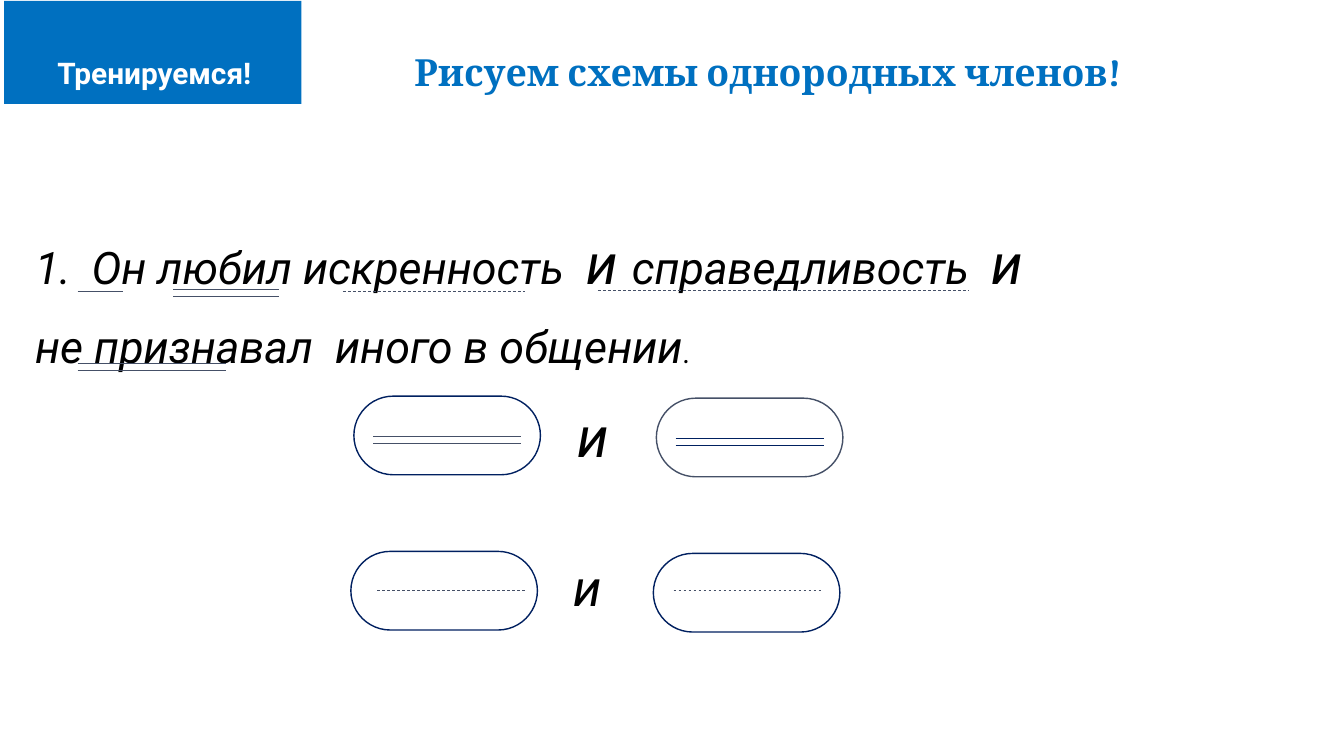
from lxml.etree import SubElement
from pptx import Presentation
from pptx.dml.color import RGBColor
from pptx.enum.dml import MSO_LINE as Dash
from pptx.enum.shapes import MSO_CONNECTOR as Conn, MSO_SHAPE as Kind
from pptx.enum.text import MSO_ANCHOR as Anchor, PP_ALIGN as Align
from pptx.oxml.ns import qn
from pptx.util import Inches, Pt

BLUE = RGBColor(0x00, 0x70, 0xC0)
NAVY = RGBColor(0x00, 0x20, 0x60)
SLATE = RGBColor(0x45, 0x50, 0x67)
BLACK = RGBColor(0, 0, 0)
WHITE = RGBColor(0xFF, 0xFF, 0xFF)


def add_run(para, text, size, color=BLACK, face="Roboto", bold=False, italic=True):
    run = para.add_run()
    run.text = text
    font = run.font
    font.size, font.name = Pt(size), face
    font.bold, font.italic = bold, italic
    font.color.rgb = color


def add_box(slide, left, top, width, height):
    box = slide.shapes.add_textbox(*map(Inches, (left, top, width, height)))
    box.text_frame.word_wrap = True
    return box.text_frame


def add_shape(slide, kind, left, top, width, height, fill):
    shape = slide.shapes.add_shape(kind, *map(Inches, (left, top, width, height)))
    shape.shadow.inherit = False
    shape.fill.solid()
    shape.fill.fore_color.rgb = fill
    return shape


def set_insets(frame, left, top, right, bottom):
    frame.margin_left, frame.margin_top = Inches(left), Inches(top)
    frame.margin_right, frame.margin_bottom = Inches(right), Inches(bottom)


def add_number(para):
    props = para._p.get_or_add_pPr()
    props.set("marL", str(Inches(0.56)))
    props.set("indent", str(-Inches(0.56)))
    SubElement(props, qn("a:buFont")).set("typeface", "+mj-lt")
    SubElement(props, qn("a:buAutoNum")).set("type", "arabicPeriod")


def add_line(slide, left, top, width, color=SLATE, dashed=False):
    line = slide.shapes.add_connector(
        Conn.STRAIGHT, Inches(left), Inches(top), Inches(left + width), Inches(top))
    line.line.color.rgb = color
    line.line.width = Pt(0.5)
    if dashed:
        line.line.dash_style = Dash.DASH
    SubElement(line._element.spPr, qn("a:effectLst"))


def add_pair(slide, left, top, width, color=SLATE):
    for shift in (0, 0.07):
        add_line(slide, left, top + shift, width, color)


def add_pill(slide, left, top, color=NAVY):
    pill = add_shape(slide, Kind.ROUNDED_RECTANGLE, left, top, 1.85, 0.78, WHITE)
    pill.adjustments[0] = 0.5
    pill.line.color.rgb = color
    pill.line.width = Pt(1)


def add_union(slide, left, top, height, size):
    para = add_box(slide, left, top, 0.61, height).paragraphs[0]
    para.space_after = Pt(16)
    add_run(para, "и", size)


def add_header(slide):
    badge = add_shape(slide, Kind.RECTANGLE, 0.04, 0.01, 2.95, 1.02, BLUE)
    badge.line.fill.background()
    frame = badge.text_frame
    frame.word_wrap = True
    frame.vertical_anchor = Anchor.MIDDLE
    set_insets(frame, 0.13, 0.52, 0.1, 0.13)
    para = frame.paragraphs[0]
    para.alignment = Align.CENTER
    add_run(para, "Тренируемся!", 21.3, WHITE, bold=True, italic=False)

    title = add_box(slide, 3.98, 0.27, 9.18, 0.73)
    title.vertical_anchor = Anchor.BOTTOM
    set_insets(title, 0.13, 0.07, 0.13, 0.07)
    add_run(title.paragraphs[0], "Рисуем схемы однородных членов!", 26.7,
            BLUE, "Cambria", bold=True, italic=False)


def add_phrase(slide):
    frame = add_box(slide, 0.25, 2.22, 12.4, 1.54)
    first, second = frame.paragraphs[0], frame.add_paragraph()
    add_number(first)
    for para in (first, second):
        para.space_after = Pt(16)
    for text, size in (("Он любил искренность  ", 32), ("и ", 40),
                       ("справедливость  ", 32), ("и", 40)):
        add_run(first, text, size)
    add_run(second, "не признавал  иного в общении", 32)
    add_run(second, ".", 21.3)

    add_line(slide, 0.77, 2.89, 0.45)
    add_pair(slide, 1.72, 2.87, 1.05)
    add_pair(slide, 0.77, 3.6, 1.47)
    add_line(slide, 3.4, 2.89, 1.81, dashed=True)
    add_line(slide, 5.93, 2.88, 3.68, dashed=True)


def add_schemes(slide):
    for left, top, edge, color in ((3.51, 3.93, NAVY, SLATE), (6.51, 3.95, SLATE, NAVY)):
        add_pill(slide, left, top, edge)
        add_pair(slide, left + 0.19, top + 0.4, 1.47, color)
    add_union(slide, 5.63, 3.93, 0.77, 40)

    for left, top, start in ((3.48, 5.47, 3.74), (6.48, 5.49, 6.68)):
        add_pill(slide, left, top)
        add_line(slide, start, 5.86, 1.47, dashed=True)
    add_union(slide, 5.59, 5.47, 0.71, 36)


def main():
    deck = Presentation()
    deck.slide_width, deck.slide_height = Inches(13.33), Inches(7.5)
    slide = deck.slides.add_slide(deck.slide_layouts[6])
    add_header(slide)
    add_phrase(slide)
    add_schemes(slide)
    deck.save("out.pptx")


if __name__ == "__main__":
    main()
